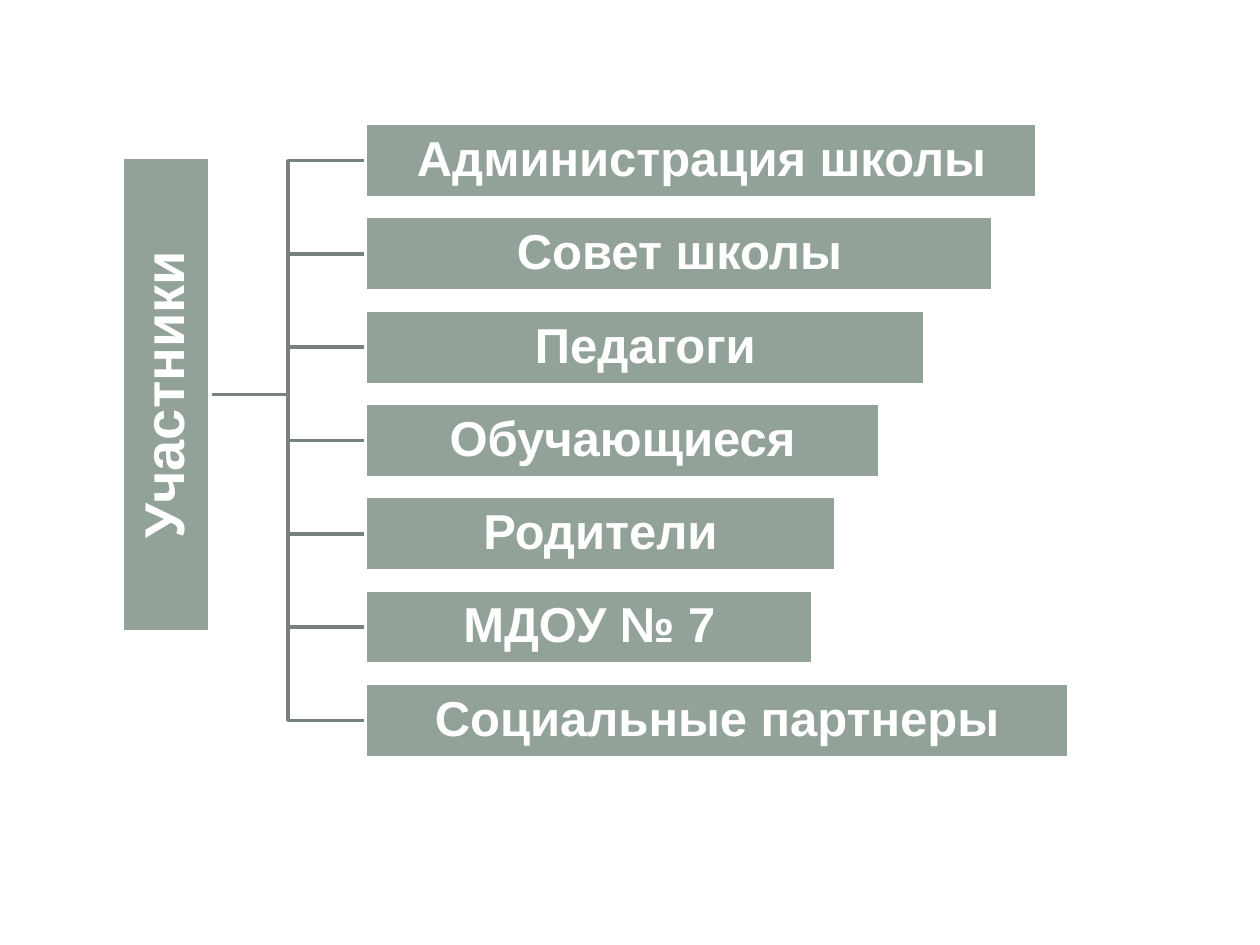
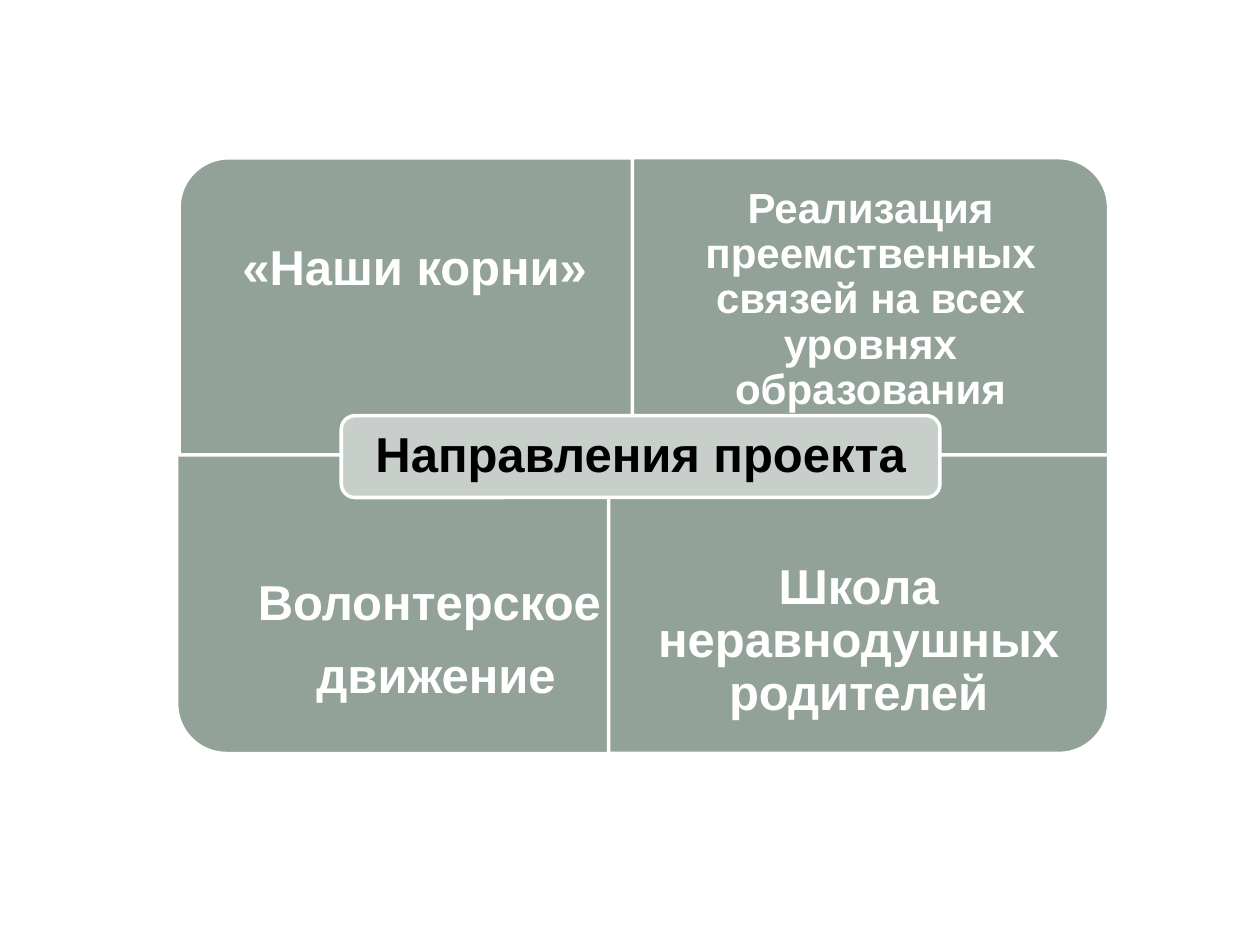
import pptx
import pptx.util
import pptx.dml.color
import pptx.enum.shapes
import pptx.enum.text
import pptx.oxml

Cm = pptx.util.Cm
Pt = pptx.util.Pt
RGBColor = pptx.dml.color.RGBColor
SHAPE = pptx.enum.shapes.MSO_SHAPE

SAGE = RGBColor(0x93, 0xA2, 0x99)
PALE = RGBColor(0xC8, 0xCE, 0xCA)
SLATE = RGBColor(0x76, 0x82, 0x7B)
WHITE = RGBColor(0xFF, 0xFF, 0xFF)
BLACK = RGBColor(0, 0, 0)
LINE = Pt(2)
BLANK_LAYOUT = 6


def write(sp, text, size=28, color=WHITE, inset=0.05):
    """Centre bold text in a shape, one paragraph per line."""
    tf = sp.text_frame
    tf.word_wrap = True
    tf.vertical_anchor = pptx.enum.text.MSO_ANCHOR.MIDDLE
    tf.margin_left = tf.margin_right = Cm(inset)
    tf.margin_top = tf.margin_bottom = Cm(inset)
    lines = text.split("\n")
    for i, line in enumerate(lines):
        p = tf.paragraphs[0] if i == 0 else tf.add_paragraph()
        p.alignment = pptx.enum.text.PP_ALIGN.CENTER
        p.line_spacing = 0.9
        if i < len(lines) - 1:
            p.space_after = Pt(11.5)
        r = p.add_run()
        r.text = line
        r.font.name = "Arial"
        r.font.size = Pt(size)
        r.font.bold = True
        r.font.color.rgb = color


class Deck:
    def __init__(self):
        self.prs = pptx.Presentation()
        self.prs.slide_width = Cm(25.4)
        self.prs.slide_height = Cm(19.05)
        self.s = None

    def new_slide(self):
        self.s = self.prs.slides.add_slide(self.prs.slide_layouts[BLANK_LAYOUT])

    def shape(self, kind, x, y, w, h, fill=SAGE):
        sp = self.s.shapes.add_shape(kind, Cm(x), Cm(y), Cm(w), Cm(h))
        sp.shadow.inherit = False
        sp.fill.solid()
        sp.fill.fore_color.rgb = fill
        sp.line.color.rgb = WHITE
        sp.line.width = LINE
        return sp

    def quadrant(self, x, y, w, h, rotation):
        """Box with one rounded corner; x, y, w, h are as seen after rotation."""
        if rotation % 180:
            x, y, w, h = x + (w - h) / 2, y + (h - w) / 2, h, w
        self.shape(SHAPE.ROUND_1_RECTANGLE, x, y, w, h).rotation = rotation

    def text(self, text, x, y, w, h, **fmt):
        write(self.s.shapes.add_textbox(Cm(x), Cm(y), Cm(w), Cm(h)), text, **fmt)

    def branch(self, root, bar):
        """Elbow from the root's right side to the bar's left, behind both."""
        c = self.s.shapes.add_connector(
            pptx.enum.shapes.MSO_CONNECTOR.ELBOW, 0, 0, 0, 0)
        c.begin_connect(root, 3)
        c.end_connect(bar, 1)
        c.line.color.rgb = SLATE
        c.line.width = LINE
        el = c._element
        el.spPr.append(pptx.oxml.parse_xml(
            '<a:effectLst xmlns:a='
            '"http://schemas.openxmlformats.org/drawingml/2006/main"/>'))
        el.getparent().insert(2, el)


def participants(deck):
    deck.new_slide()
    # Root box with upward text
    root = deck.shape(SHAPE.RECTANGLE, 2.46, 3.18, 1.78, 9.55)
    write(root, "Участники", size=32)
    root.text_frame._txBody.bodyPr.set("vert", "vert270")
    # Bars and their branches
    bars = [("Администрация школы", 13.54), ("Совет школы", 12.65),
            ("Педагоги", 11.28), ("Обучающиеся", 10.36), ("Родители", 9.47),
            ("МДОУ № 7", 9.02), ("Социальные партнеры", 14.17)]
    for i, (name, width) in enumerate(bars):
        bar = deck.shape(SHAPE.RECTANGLE, 7.37, 2.49 + 1.88 * i, width, 1.5)
        write(bar, name)
        deck.branch(root, bar)


def directions(deck):
    deck.new_slide()
    # Four quadrants: left, width, rotation, text top, text, format
    top, height, text_height = 3.18, 6.02, 4.52
    low = top + 5.99
    low_text = low + height - text_height
    quadrants = [
        (3.61, 9.5, top, 270, top, "«Наши корни»", {"inset": 0.56}),
        (12.75, 9.6, top, 0, top + 0.61,
         "Реализация преемственных связей на всех уровнях образования",
         {"size": 24, "inset": 0.48}),
        (3.56, 10.19, low, 180, low_text, "Волонтерское\n движение",
         {"inset": 0.56}),
        (12.27, 10.08, low, 90, low_text, "Школа неравнодушных родителей",
         {"inset": 0.56}),
    ]
    for x, w, y, rotation, text_y, text, fmt in quadrants:
        deck.quadrant(x, y, w, height, rotation)
        deck.text(text, x, text_y, w, text_height, **fmt)
    # Centre label
    hub = deck.shape(SHAPE.ROUNDED_RECTANGLE, 6.88, 8.38, 12.07, 1.65, fill=PALE)
    write(hub, "Направления проекта", color=BLACK)


def main():
    deck = Deck()
    participants(deck)
    directions(deck)
    deck.prs.save("out.pptx")


if __name__ == "__main__":
    main()
